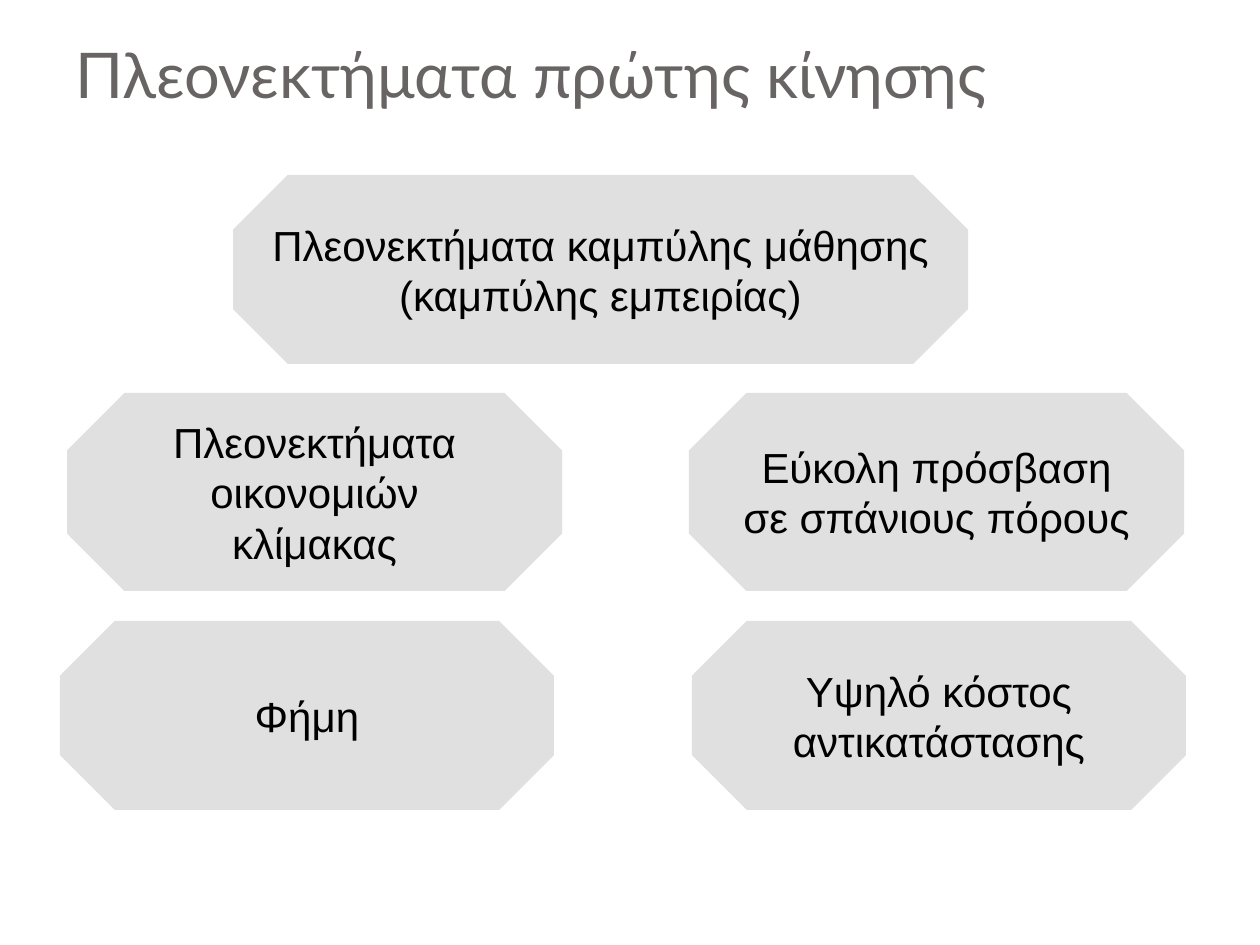
"""Build the slide on first-mover advantages."""
from dataclasses import dataclass

from pptx import Presentation
from pptx import util as u
from pptx.dml.color import RGBColor
from pptx.enum import shapes, text

PX = 914400 / 126


@dataclass(frozen=True)
class Theme:
    title_font: str = "Lato"
    body_font: str = "Arial"
    title_size: int = 36
    body_size: int = 24
    title_color: str = "696464"
    body_color: str = "000000"
    box_fill: str = "E1E0E0"
    box_corner: float = 0.29


@dataclass(frozen=True)
class Advantage:
    label: str
    left: int
    top: int
    width: int
    height: int


THEME = Theme()
ADVANTAGES = (
    Advantage("Πλεονεκτήματα καμπύλης μάθησης\n(καμπύλης εμπειρίας)", 233, 175, 735, 189),
    Advantage("Πλεονεκτήματα\nοικονομιών\nκλίμακας", 67, 393, 495, 198),
    Advantage("Εύκολη πρόσβαση\nσε σπάνιους πόρους", 689, 393, 495, 198),
    Advantage("Φήμη", 60, 621, 494, 189),
    Advantage("Υψηλό κόστος\nαντικατάστασης", 692, 621, 494, 189),
)


def px(length: int) -> u.Emu:
    return u.Emu(round(length * PX))


def write_text(shape, content: str, *, font: str, size: int, color: str,
               align=text.PP_ALIGN.CENTER, anchor=text.MSO_ANCHOR.MIDDLE,
               wrap: bool = False) -> None:
    frame = shape.text_frame
    frame.auto_size = text.MSO_AUTO_SIZE.NONE
    frame.word_wrap = wrap
    frame.vertical_anchor = anchor
    paragraph = frame.paragraphs[0]
    paragraph.text = content
    paragraph.alignment = align
    for run in paragraph.runs:
        run.font.name = font
        run.font.size = u.Pt(size)
        run.font.color.rgb = RGBColor.from_string(color)


def add_title(slide, content: str) -> None:
    title = slide.shapes.title
    title.left, title.top, title.width, title.height = map(px, (63, 35, 1134, 89))
    write_text(title, content, font=THEME.title_font, size=THEME.title_size,
               color=THEME.title_color, align=text.PP_ALIGN.LEFT,
               anchor=text.MSO_ANCHOR.BOTTOM, wrap=True)
    title.text_frame.margin_bottom = u.Inches(0.1)


def add_advantage(slide, advantage: Advantage) -> None:
    shape = slide.shapes.add_shape(
        shapes.MSO_SHAPE.OCTAGON, px(advantage.left), px(advantage.top),
        px(advantage.width), px(advantage.height))
    shape.adjustments[0] = THEME.box_corner
    shape.shadow.inherit = False
    shape.fill.solid()
    shape.fill.fore_color.rgb = RGBColor.from_string(THEME.box_fill)
    shape.line.fill.background()
    write_text(shape, advantage.label, font=THEME.body_font,
               size=THEME.body_size, color=THEME.body_color)


def main() -> None:
    presentation = Presentation()
    presentation.slide_width, presentation.slide_height = px(1260), px(945)
    slide = presentation.slides.add_slide(presentation.slide_layouts[5])
    add_title(slide, "Πλεονεκτήματα πρώτης κίνησης")
    for advantage in ADVANTAGES:
        add_advantage(slide, advantage)
    presentation.save("out.pptx")


if __name__ == "__main__":
    main()
